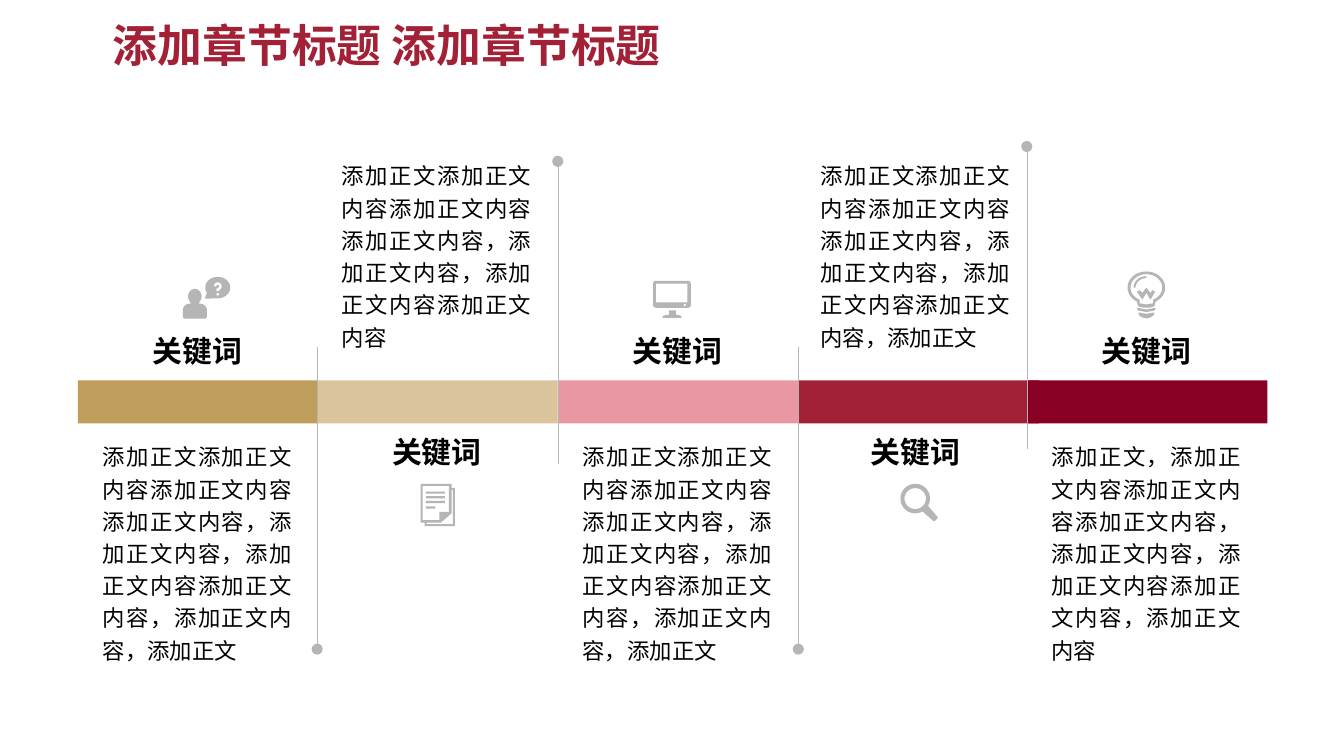
from collections import namedtuple
from math import cos, radians, sin

from lxml import etree
from pptx import Presentation
from pptx import util as u
from pptx.dml.color import RGBColor
from pptx.enum import shapes, text
from pptx.oxml.ns import qn

FONT = "Noto Sans CJK SC"
GRAY = "B5B5B6"
BAR_TOP, BAR_WIDTH, BAR_HEIGHT = 2.83, 1.79, 0.32
HEADING_WIDTH, BODY_WIDTH = 1.49, 1.57
HEADING = "关键词"
START = "添加正文添加正文内容添加正文内容添加正文内容，添加正文内容，添加正文内容添加正文内容"
LONG = START + "，添加正文内容，添加正文"
LAST = "添加正文，添加正文内容添加正文内容添加正文内容，添加正文内容，添加正文内容添加正文内容，添加正文内容"

Column = namedtuple("Column", "left center color body icon icon_left icon_top")


def color(hex_string):
    return RGBColor.from_string(hex_string)


def write(frame, words, size, fill="000000", bold=False, align=text.PP_ALIGN.LEFT,
          spacing=None, inset=None, anchor=text.MSO_ANCHOR.TOP,
          fit=text.MSO_AUTO_SIZE.SHAPE_TO_FIT_TEXT):
    frame.word_wrap = True
    frame.auto_size = fit
    frame.vertical_anchor = anchor
    if inset is not None:
        frame.margin_left = frame.margin_right = u.Inches(inset)
        frame.margin_top = frame.margin_bottom = u.Inches(inset)
    para = frame.paragraphs[0]
    para.alignment = align
    if spacing:
        para.line_spacing = spacing
    span = para.add_run()
    span.text = words
    span.font.size = u.Pt(size)
    span.font.bold = bold
    span.font.color.rgb = color(fill)
    span.font.name = FONT
    etree.SubElement(span._r.get_or_add_rPr(), qn("a:ea"), typeface=FONT)


def add_text(page, left, top, width, height, words, **style):
    box = page.shapes.add_textbox(*map(u.Inches, (left, top, width, height)))
    write(box.text_frame, words, **style)


def paint(shape, fill):
    shape.shadow.inherit = False
    shape.fill.solid()
    shape.fill.fore_color.rgb = color(fill)
    shape.line.fill.background()


# Icon outlines are in hundredths of an inch from the icon's top left corner.
def arc(x, y, rx, ry, start=0, end=360, steps=32):
    """Points along an ellipse; angles run clockwise from the right."""
    angles = [radians(start + (end - start) * i / steps) for i in range(steps + 1)]
    return [(x + rx * cos(a), y + ry * sin(a)) for a in angles]


def rect(left, top, width, height):
    right, bottom = left + width, top + height
    return [(left, top), (right, top), (right, bottom), (left, bottom)]


def rounded(left, top, width, height, r):
    right, bottom = left + width - r, top + height - r
    corners = [(right, bottom), (left + r, bottom), (left + r, top + r), (right, top + r)]
    return [point for i, (x, y) in enumerate(corners)
            for point in arc(x, y, r, r, 90 * i, 90 * i + 90, 6)]


def person_parts():
    person = (arc(10, 14.5, 5, 5.5, 135, 405) + [(13, 20)] + arc(14, 25, 5, 5, 270, 360)
              + [(19, 30), (18, 31), (2, 31), (1, 30)]
              + arc(6, 25, 5, 5, 180, 270) + [(7, 20)])
    bubble = arc(27, 8, 9.3, 8, 150, 450) + [(18, 16.2), (17.5, 15.5)]
    hook = (arc(27, 7, 3, 3, 180, 420) + [(28, 10.7), (26, 10.7), (26, 9)]
            + arc(27, 7, 1, 1, 60, -180))
    return [[person], [bubble, hook, arc(27, 13, 1, 1)]]


def document_parts():
    front = [(0, 0), (23, 0), (23, 3), (25.5, 3), (25.5, 31.5), (3, 31.5), (3, 29), (0, 29)]
    page = [(1.5, 1.5), (21, 1.5), (21, 21), (14, 21), (14, 27), (1.5, 27)]
    back = [(4.5, 30), (4.5, 29), (15, 29), (23, 22), (23, 4.5), (24, 4.5), (24, 30)]
    lines = [rect(4, y, 14, 1.6) for y in (5.8, 9.2, 12.8)]
    return [[front, page, back, *lines, rect(4, 16.8, 7, 1.8)]]


def monitor_parts():
    stand = [(7, 27.5), (7, 26), (12, 25), (12, 22), (17, 22), (17, 25), (21, 26), (21, 27.5)]
    return [[rounded(0, 0, 28, 20, 2), rect(2, 2, 23.5, 14), arc(23.5, 18, 0.9, 0.9), stand]]


def magnifier_parts():
    glass = arc(11, 11, 11, 11, 60, 390) + [
        (27, 24), (27.8, 25), (27.3, 26), (26, 27.3), (25, 27.8), (24, 27.3), (17, 21)]
    return [[glass, arc(11, 11, 8, 7.8)]]


def bulb_parts():
    glass = arc(14, 12, 14, 12, 120, 420) + [(20, 25.3)] + arc(14, 25, 6.5, 2, 0, 180, 8)
    inside = arc(14, 12, 11.8, 10, 115, 425) + [(19, 23.7), (14, 24.5), (9, 23.7)]
    collar = [(7, 27), (14, 28.3), (21, 27), (20.3, 29), (14, 30.2), (7.7, 29)]
    base = [(8, 30.5), (14, 31.5), (20, 30.5), (19.5, 32.5), (17.5, 34), (14, 35),
            (10.5, 34), (8.5, 32.5)]
    shine = arc(14, 12, 9.5, 8.5, 180, 270) + arc(14, 12, 8, 7, 270, 180)
    filament = [(7, 15), (9, 14), (11, 16), (14, 12), (17, 16), (18.5, 14), (20.5, 15),
                (17, 21), (14, 16), (11, 21)]
    return [[glass, inside, collar, base, shine, filament]]


def add_icon(page, left, top, parts):
    for outlines in parts:
        placed = [[(u.Inches(left + x / 100), u.Inches(top + y / 100)) for x, y in outline]
                  for outline in outlines]
        builder = page.shapes.build_freeform(*placed[0][0])
        for i, points in enumerate(placed):
            if i:
                builder.move_to(*points[0])
            builder.add_line_segments(points[1:], close=True)
        paint(builder.convert_to_shape(), GRAY)


def add_divider(page, x, start, end):
    line = page.shapes.add_connector(
        shapes.MSO_CONNECTOR.STRAIGHT, *map(u.Inches, (x, start, x, end)))
    line.line.color.rgb = color(GRAY)
    line.line.width = u.Pt(0.25)
    etree.SubElement(line.line._get_or_add_ln(), qn("a:tailEnd"), type="oval")
    etree.SubElement(line._element.spPr, qn("a:effectLst"))


def add_title(page, left, top, width, height):
    title = page.shapes.title
    title.left, title.top, title.width, title.height = map(
        u.Inches, (left, top, width, height))
    write(title.text_frame, "添加章节标题 添加章节标题", size=24, fill="A32136", bold=True,
          anchor=text.MSO_ANCHOR.MIDDLE, fit=text.MSO_AUTO_SIZE.NONE)


def add_band(page, columns):
    for column in columns:
        bar = page.shapes.add_shape(shapes.MSO_SHAPE.RECTANGLE, *map(
            u.Inches, (column.left, BAR_TOP, BAR_WIDTH, BAR_HEIGHT)))
        paint(bar, column.color)


def add_column(page, column, heading_above):
    heading_top, body_top, body_height = (2.43, 3.18, 1.83) if heading_above else (3.18, 1.09, 1.59)
    add_text(page, column.center - HEADING_WIDTH / 2, heading_top, HEADING_WIDTH, 0.37,
             HEADING, size=16, bold=True, align=text.PP_ALIGN.CENTER)
    add_text(page, column.center - BODY_WIDTH / 2, body_top, BODY_WIDTH, body_height,
             column.body, size=12, align=text.PP_ALIGN.JUSTIFY, spacing=1.2, inset=0.08)
    add_icon(page, column.icon_left, column.icon_top, column.icon())


def main():
    deck = Presentation()
    deck.slide_width = u.Inches(10)
    deck.slide_height = deck.slide_width * 9 // 16
    page = deck.slides.add_slide(deck.slide_layouts[5])
    columns = [
        Column(0.58, 1.47, "BF9D5A", LONG, person_parts, 1.35, 2.06),
        Column(2.36, 3.25, "D9C49C", START, document_parts, 3.13, 3.6),
        Column(4.15, 5.04, "EA97A4", LONG, monitor_parts, 4.86, 2.09),
        Column(5.94, 6.81, "A32136", START + "，添加正文", magnifier_parts, 6.7, 3.6),
        Column(7.64, 8.53, "880024", LAST, bulb_parts, 8.39, 2.02),
    ]
    add_title(page, 0.74, 0.06, 6.1, 0.54)
    add_band(page, columns)
    spans = [(2.58, 4.83), (3.45, 1.2), (2.58, 4.83), (3.34, 1.09)]
    for column, (start, end) in zip(columns[1:], spans):
        add_divider(page, column.left, start, end)
    for i, column in enumerate(columns):
        add_column(page, column, heading_above=i % 2 == 0)
    deck.save("out.pptx")


if __name__ == "__main__":
    main()
